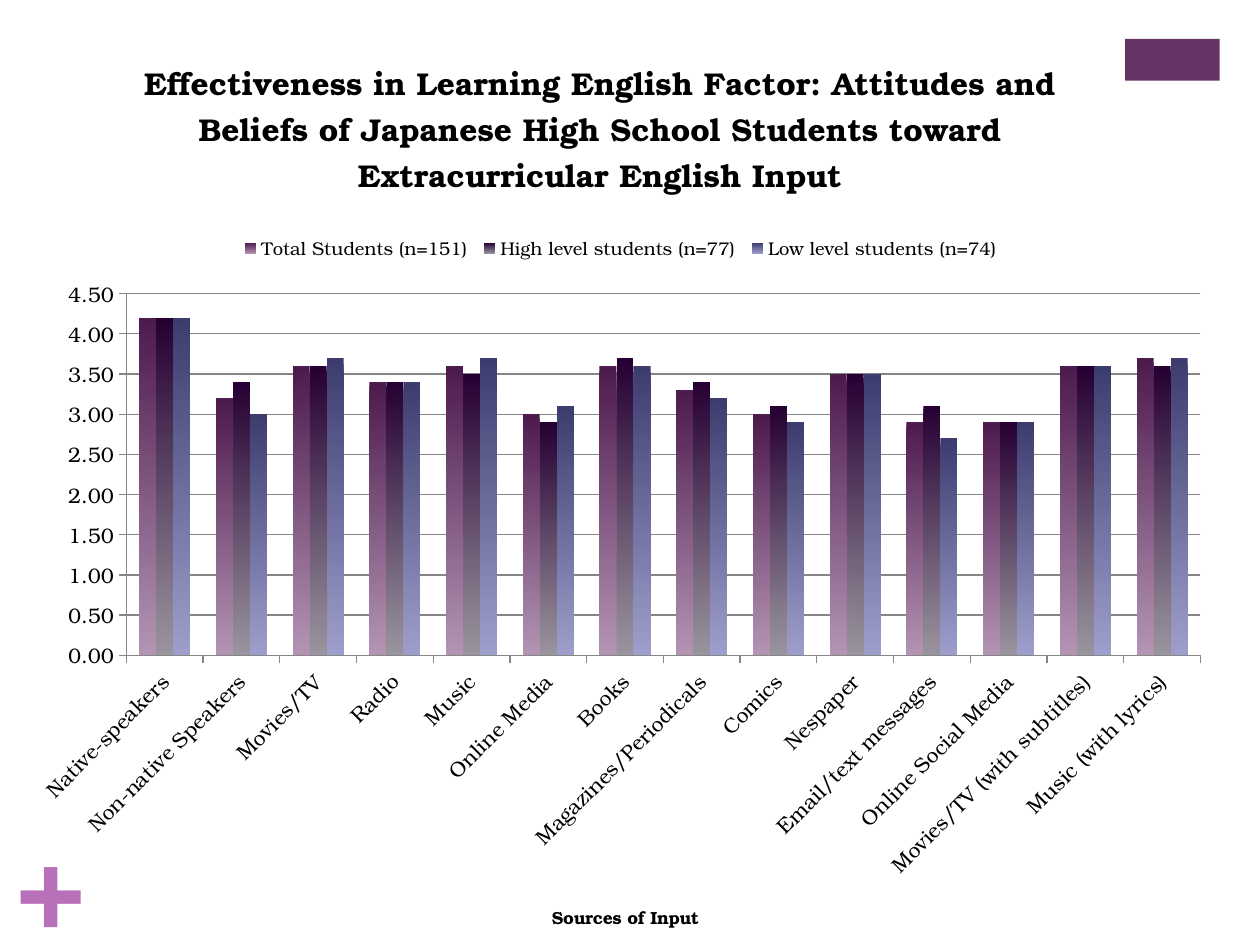
from lxml import etree
from pptx import Presentation
from pptx.chart.data import CategoryChartData
from pptx.dml.color import RGBColor
from pptx.enum.chart import XL_CHART_TYPE, XL_LEGEND_POSITION, XL_TICK_MARK
from pptx.enum.shapes import MSO_SHAPE
from pptx.oxml import parse_xml
from pptx.oxml.ns import nsdecls, qn
from pptx.util import Inches, Pt

COLUMNS = XL_CHART_TYPE.COLUMN_CLUSTERED
LEGEND_TOP = XL_LEGEND_POSITION.TOP
TICK_OUTSIDE = XL_TICK_MARK.OUTSIDE
RECTANGLE = MSO_SHAPE.RECTANGLE

FONT = "TeX Gyre Bonum"
BLACK = RGBColor(0x00, 0x00, 0x00)
GRAY = RGBColor(0x86, 0x86, 0x86)
PLUM = RGBColor(0x66, 0x33, 0x66)
ORCHID = RGBColor(0xB8, 0x70, 0xB8)

TITLE = ("Effectiveness in Learning English Factor: Attitudes and Beliefs of "
         "Japanese High School Students toward Extracurricular English Input")
SOURCES = [
    "Native-speakers", "Non-native Speakers", "Movies/TV", "Radio", "Music",
    "Online Media", "Books", "Magazines/Periodicals", "Comics", "Nespaper",
    "Email/text messages", "Online Social Media",
    "Movies/TV (with subtitles)", "Music (with lyrics)",
]
RATINGS = {
    "Total Students (n=151)":
        [4.2, 3.2, 3.6, 3.4, 3.6, 3, 3.6, 3.3, 3, 3.5, 2.9, 2.9, 3.6, 3.7],
    "High level students (n=77)":
        [4.2, 3.4, 3.6, 3.4, 3.5, 2.9, 3.7, 3.4, 3.1, 3.5, 3.1, 2.9, 3.6, 3.6],
    "Low level students (n=74)":
        [4.2, 3, 3.7, 3.4, 3.7, 3.1, 3.6, 3.2, 2.9, 3.5, 2.7, 2.9, 3.6, 3.7],
}
GRADIENTS = [
    (RGBColor(0x4D, 0x1A, 0x4D), RGBColor(0xB3, 0x94, 0xB3)),
    (RGBColor(0x26, 0x00, 0x33), RGBColor(0x9A, 0x94, 0x9E)),
    (RGBColor(0x3C, 0x3C, 0x6E), RGBColor(0x9E, 0x9E, 0xCC)),
]


def format_font(font, size, color=BLACK, bold=False):
    font.name = FONT
    font.size = Pt(size)
    font.bold = bold
    font.color.rgb = color


def write_text(frame, text, **style):
    span = frame.paragraphs[0].add_run()
    span.text = text
    format_font(span.font, **style)


def place(element, after, inner=False, **fractions):
    """Fix a chart part at fractions of the chart area, after the child named."""
    for old in element.findall(qn("c:layout")):
        element.remove(old)
    layout = parse_xml(f"<c:layout {nsdecls('c')}><c:manualLayout/></c:layout>")
    manual = layout[0]
    settings = {"layoutTarget": "inner"} if inner else {}
    settings.update(xMode="edge", yMode="edge", **fractions)
    for name, value in settings.items():
        etree.SubElement(manual, qn(f"c:{name}")).set("val", str(value))
    previous = element.find(qn(after)) if after else None
    if previous is None:
        element.insert(0, layout)
    else:
        previous.addnext(layout)


class SlideBuilder:
    def __init__(self, page):
        self.page = page

    def rectangle(self, left, top, width, height, color):
        shape = self.page.shapes.add_shape(
            RECTANGLE, Inches(left), Inches(top), Inches(width), Inches(height))
        shape.shadow.inherit = False
        shape.fill.solid()
        shape.fill.fore_color.rgb = color
        shape.line.fill.background()

    def text(self, left, top, width, height, text, **style):
        box = self.page.shapes.add_textbox(
            Inches(left), Inches(top), Inches(width), Inches(height))
        frame = box.text_frame
        frame.margin_left = frame.margin_right = 0
        frame.margin_top = frame.margin_bottom = 0
        write_text(frame, text, **style)

    def column_chart(self, left, top, width, height):
        data = CategoryChartData(number_format="0.00")
        data.categories = SOURCES
        for name, values in RATINGS.items():
            data.add_series(name, values)
        chart = self.page.shapes.add_chart(
            COLUMNS, Inches(left), Inches(top), Inches(width), Inches(height),
            data).chart
        format_font(chart.font, size=10)

        write_text(chart.chart_title.text_frame, TITLE, size=18, bold=True)
        chart.chart_title.include_in_layout = False
        place(chart.chart_title._element, "c:tx", x=0.1, y=0.01)

        chart.has_legend = True
        chart.legend.position = LEGEND_TOP
        chart.legend.include_in_layout = False
        format_font(chart.legend.font, size=10.5)
        place(chart.legend._element, "c:legendPos", x=0.18, y=0.21, w=0.64, h=0.04)

        self.style_axes(chart)
        self.style_columns(chart.plots[0])
        plot_area = chart.plots[0]._element.getparent()
        place(plot_area, None, inner=True, x=0.09, y=0.28, w=0.89, h=0.4)

    def style_axes(self, chart):
        sources, ratings = chart.category_axis, chart.value_axis
        for axis in (sources, ratings):
            axis.major_tick_mark = TICK_OUTSIDE
            axis.format.line.color.rgb = GRAY
            format_font(axis.tick_labels.font, size=12)
        sources.tick_labels.font._element.getparent().getparent().getparent().find(
            qn("a:bodyPr")).set("rot", "-2700000")
        write_text(sources.axis_title.text_frame, "Sources of Input",
                   size=10, bold=True)
        place(sources.axis_title._element, "c:tx", x=0.44, y=0.95)

        ratings.minimum_scale, ratings.maximum_scale = 0, 4.5
        ratings.major_unit = 0.5
        ratings.tick_labels.number_format = "0.00"
        ratings.tick_labels.number_format_is_linked = False
        ratings.has_major_gridlines = True
        ratings.major_gridlines.format.line.color.rgb = GRAY

    def style_columns(self, plot):
        plot.gap_width = 150
        plot.overlap = 0
        plot.vary_by_categories = False
        for series, colors in zip(plot.series, GRADIENTS):
            fill = series.format.fill
            fill.gradient()
            fill.gradient_angle = 270
            for stop, color in zip(fill.gradient_stops, colors):
                stop.color.rgb = color


def main():
    deck = Presentation()
    deck.slide_width, deck.slide_height = Inches(10), Inches(7.5)
    builder = SlideBuilder(deck.slides.add_slide(deck.slide_layouts[6]))
    builder.rectangle(8.93, 0.31, 0.75, 0.33, PLUM)
    builder.text(0.13, 6.44, 0.64, 1.11, "+", size=66, color=ORCHID, bold=True)
    builder.column_chart(0.14, 0.32, 9.58, 7.18)
    deck.save("out.pptx")


if __name__ == "__main__":
    main()
